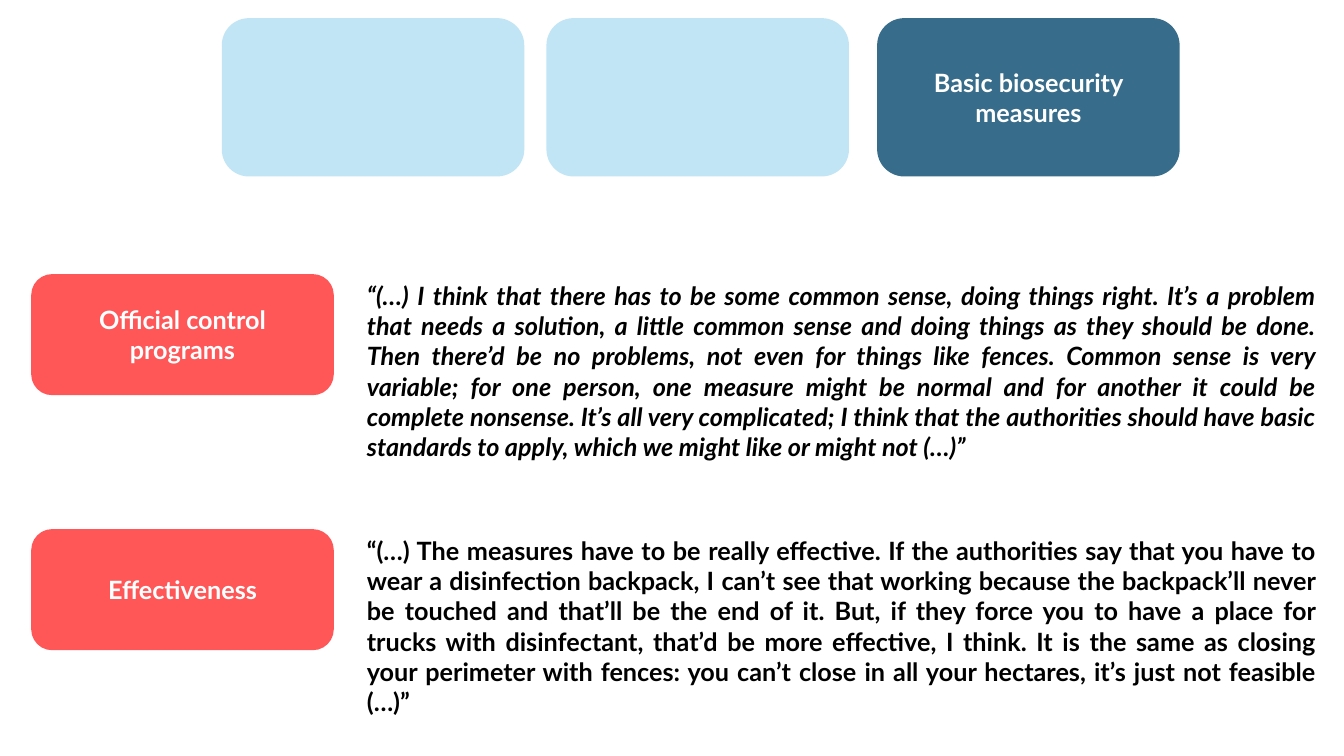
from pptx import Presentation
from pptx.dml.color import RGBColor
from pptx.enum.shapes import MSO_SHAPE as Preset
from pptx.enum.text import MSO_ANCHOR as Anchor, MSO_AUTO_SIZE as AutoSize, PP_ALIGN as Align
from pptx.util import Inches, Pt

FONT = "Lato"
WHITE, BLACK, RED, PALE_BLUE, DARK_BLUE = "FFFFFF", "000000", "FF5657", "C1E5F5", "376C8A"

# left edge, fill, text
TABS = [
    (2.21, PALE_BLUE, ""),
    (5.43, PALE_BLUE, ""),
    (8.71, DARK_BLUE, "Basic biosecurity measures"),
]
# label, quote, italic quote
TOPICS = [
    ("Official control programs",
     "“(…) I think that there has to be some common sense, doing things right. "
     "It’s a problem that needs a solution, a little common sense and doing things "
     "as they should be done. Then there’d be no problems, not even for things like "
     "fences. Common sense is very variable; for one person, one measure might be "
     "normal and for another it could be complete nonsense. It’s all very complicated; "
     "I think that the authorities should have basic standards to apply, which we "
     "might like or might not (…)”", True),
    ("Effectiveness",
     "“(…) The measures have to be really effective. If the authorities say that you "
     "have to wear a disinfection backpack, I can’t see that working because the "
     "backpack’ll never be touched and that’ll be the end of it. But, if they force "
     "you to have a place for trucks with disinfectant, that’d be more effective, "
     "I think. It is the same as closing your perimeter with fences: you can’t close "
     "in all your hectares, it’s just not feasible (…)”", False),
]

BOX_WIDTH = 2.98
TAB_TOP, TAB_HEIGHT = 0.19, 1.55
LABEL_LEFT, LABEL_HEIGHT = 0.32, 1.18
QUOTE_LEFT, QUOTE_WIDTH, QUOTE_HEIGHT = 3.54, 9.61, 1.92
FIRST_ROW, ROW_STEP = 2.73, 2.53


def color(hex_string):
    return RGBColor.from_string(hex_string)


def write(shape, text, text_color, align, italic=False):
    frame = shape.text_frame
    frame.word_wrap = True
    paragraph = frame.paragraphs[0]
    paragraph.alignment = align
    run = paragraph.add_run()
    run.text = text
    run.font.name = FONT
    run.font.size = Pt(18)
    run.font.bold = True
    run.font.italic = italic
    run.font.color.rgb = color(text_color)


def add_box(slide, left, top, height, fill, text):
    box = slide.shapes.add_shape(
        Preset.ROUNDED_RECTANGLE, Inches(left), Inches(top), Inches(BOX_WIDTH), Inches(height))
    box.shadow.inherit = False
    box.fill.solid()
    box.fill.fore_color.rgb = color(fill)
    box.line.color.rgb = color(fill)
    box.line.width = Pt(1.5)
    if text:
        box.text_frame.vertical_anchor = Anchor.MIDDLE
        write(box, text, WHITE, Align.CENTER)


def add_quote(slide, top, quote, italic):
    box = slide.shapes.add_textbox(
        Inches(QUOTE_LEFT), Inches(top), Inches(QUOTE_WIDTH), Inches(QUOTE_HEIGHT))
    box.text_frame.auto_size = AutoSize.SHAPE_TO_FIT_TEXT
    write(box, quote, BLACK, Align.JUSTIFY, italic)


def main():
    presentation = Presentation()
    presentation.slide_width, presentation.slide_height = Inches(13.33), Inches(7.5)
    slide = presentation.slides.add_slide(presentation.slide_layouts[6])
    for row, (label, quote, italic) in enumerate(TOPICS):
        top = FIRST_ROW + row * ROW_STEP
        add_box(slide, LABEL_LEFT, top, LABEL_HEIGHT, RED, label)
        add_quote(slide, top, quote, italic)
    for left, fill, text in TABS:
        add_box(slide, left, TAB_TOP, TAB_HEIGHT, fill, text)
    presentation.save("out.pptx")


if __name__ == "__main__":
    main()
